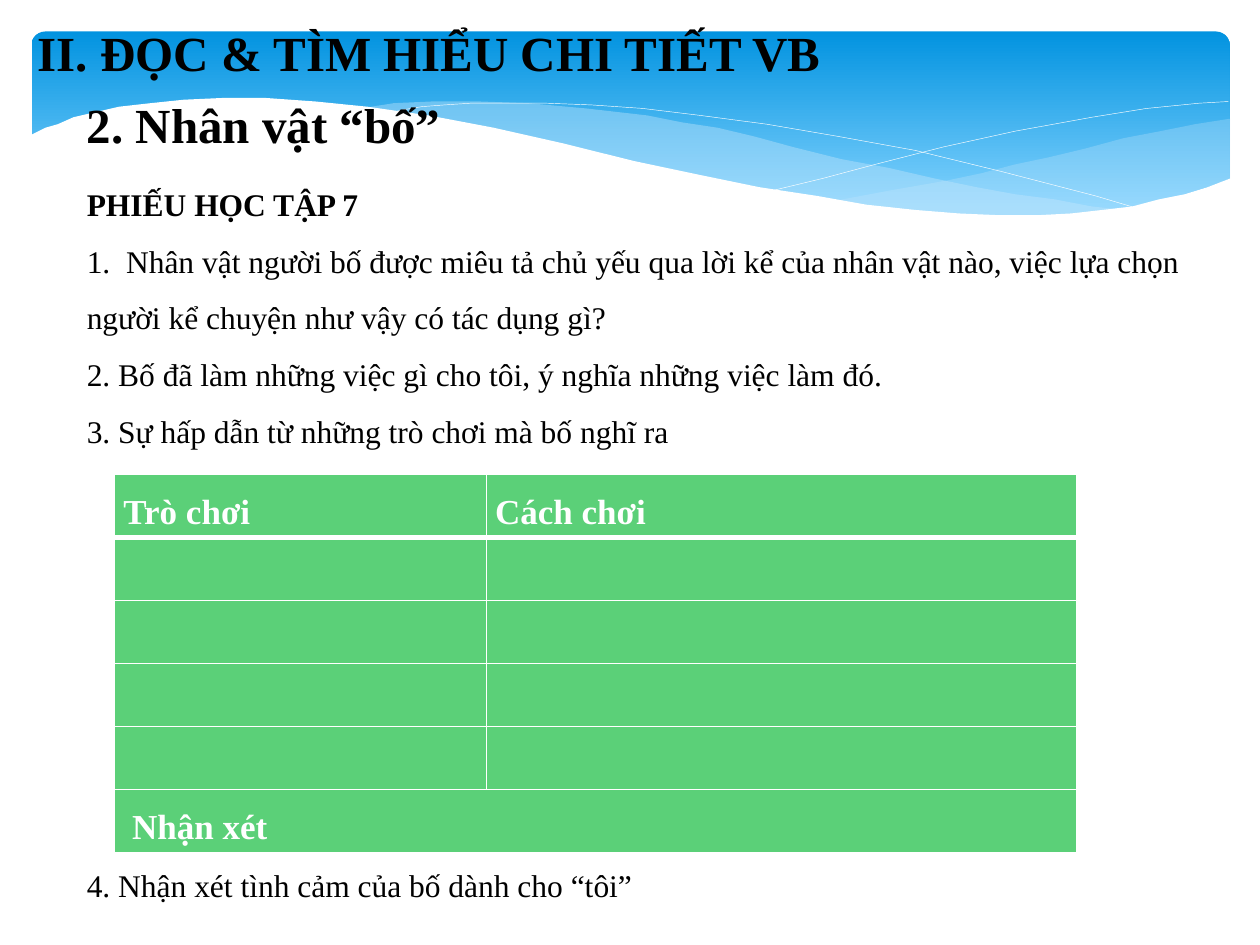
import pptx
import pptx.util
import pptx.dml.color
import pptx.enum.shapes
import pptx.enum.text
import lxml.etree

Pt = pptx.util.Pt
ALIGN = pptx.enum.text.PP_ALIGN
TOP = pptx.enum.text.MSO_ANCHOR.TOP
A = "{http://schemas.openxmlformats.org/drawingml/2006/main}"
WHITE, BLACK, GREEN, MIST = "FFFFFF", "000000", "5BD078", "C6E7FC"


def rgb(value):
    return pptx.dml.color.RGBColor.from_string(value)


def write(paragraph, text, size=18, color=BLACK, bold=False, align=ALIGN.LEFT, spacing=1.0, before=0):
    paragraph.alignment = align
    paragraph.line_spacing = spacing
    paragraph.space_before = Pt(before)
    run = paragraph.add_run()
    run.text = text
    run.font.name = "Times New Roman"
    run.font.size = Pt(size)
    run.font.bold = bold
    run.font.color.rgb = rgb(color)


deck = pptx.Presentation()
deck.slide_width, deck.slide_height = Pt(720), Pt(540)
slide = deck.slides.add_slide(deck.slide_layouts[5])
shapes = slide.shapes

banner = shapes.add_shape(pptx.enum.shapes.MSO_SHAPE.ROUNDED_RECTANGLE, Pt(18), Pt(18), Pt(684.7), Pt(112.3))
banner.adjustments[0] = 0.07
banner.shadow.inherit = False
banner.line.fill.background()
banner.fill.gradient()
banner.fill.gradient_angle = 270
for stop, position, color in zip(banner.fill.gradient_stops, (0, 0.9), ("0293E0", "83D3FE")):
    stop.position = position
    stop.color.rgb = rgb(color)

right_wave = [
    (702, 67.7), (682.6, 71.3), (663.1, 74.9), (641.5, 79.2), (619.9, 85), (599, 90), (579.6, 94.3),
    (560.9, 98.6), (542.2, 102.9), (508.3, 109.4), (475.9, 115.2), (497.5, 118.1), (517.7, 120.2),
    (536.4, 121.7), (553.7, 123.1), (570.2, 123.8), (601.2, 123.8), (614.9, 122.6), (627.8, 121.5),
    (640.1, 119.5), (651.6, 117.4), (663.1, 115.2), (683.3, 109.4), (693.4, 105.8), (702.7, 101.5),
    (702.7, 67.7),
]
middle_wave = [
    (643, 120.2), (623.5, 118.1), (602.6, 114.5), (580.3, 110.9), (558, 107.3), (533.5, 102.2),
    (508.3, 96.5), (481, 90.7), (452.9, 83.5), (430.6, 78.5), (409.7, 73.4), (389.5, 69.8),
    (370.1, 66.2), (334.8, 61.9), (302.4, 59), (273.6, 57.6), (247, 57.6), (225.4, 59),
    (205.9, 61.9), (232.6, 64.8), (260.6, 69.8), (290.9, 76.3), (323.3, 83.5), (353.5, 90.7),
    (381.6, 97.2), (407.5, 103), (432.7, 108), (456.5, 112.3), (478.8, 115.9), (500.4, 118.8),
    (519.8, 121), (538.6, 122.6), (556.6, 123.8), (573.1, 124.6), (589, 124.6), (617, 123.1),
]
falling_line = [
    (222.5, 64.8), (229, 63.4), (241.2, 61.2), (254.2, 60.2), (269.3, 59.2), (288.7, 58.8),
    (311.8, 58.7), (337.7, 59.8), (367.2, 61.9), (400.3, 65.5), (437.8, 70.6), (478.8, 77.8),
    (523.4, 86.4), (572.4, 97.9), (625.7, 111.6), (653, 119.5),
]
rising_line = [
    (441.4, 108.7), (470.2, 101.5), (500.4, 93.6), (538.6, 84.2), (580.3, 74.9), (623.5, 67),
    (655.2, 61.9), (684.7, 59), (702, 57.6),
]
page_edge = [
    (703.4, 101.5), (690.5, 106.6), (676.8, 110.9), (662.4, 114.5), (647.3, 117.8), (630, 120.2),
    (612, 122.2), (592.6, 123.1), (571, 123.2), (547.9, 122.3), (522.7, 120.2), (495.4, 116.8),
    (466.6, 112.5), (434.2, 107), (399.6, 100.1), (362.2, 92), (321.8, 82.1), (281.5, 73.4),
    (244.8, 66.2), (210.2, 61.2), (180, 58.2), (151.9, 56.4), (127.4, 56.2), (105.1, 57.1),
    (85.7, 59), (68.4, 61.3), (54.7, 64.1), (42.5, 67.2), (33.1, 70.6), (25.9, 73.4),
    (18, 76.8), (16.6, 77.3), (16.6, 161.3), (703.4, 161.3),
]
for outline, color, opacity in (
    (right_wave, MIST, 29),
    (middle_wave, MIST, 40),
    (falling_line, None, None),
    (rising_line, None, None),
    (page_edge, WHITE, 100),
):
    builder = shapes.build_freeform(*outline[0], scale=float(Pt(1)))
    builder.add_line_segments(outline[1:], close=color is not None)
    curve = builder.convert_to_shape()
    curve.shadow.inherit = False
    if color is None:
        curve.fill.background()
        curve.line.color.rgb = rgb(WHITE)
        curve.line.width = Pt(0.25)
        continue
    curve.line.fill.background()
    curve.fill.solid()
    curve.fill.fore_color.rgb = rgb(color)
    if opacity < 100:
        tint = curve.element.find(f".//{A}solidFill/{A}srgbClr")
        lxml.etree.SubElement(tint, A + "alpha", val=str(opacity * 1000))

heading = shapes.title
shapes.element.append(heading.element)
heading.left, heading.top, heading.width, heading.height = Pt(14.4), Pt(9.4), Pt(465), Pt(41)
subheading = shapes.add_textbox(Pt(42.5), Pt(50.4), Pt(436.5), Pt(41))
worksheet = shapes.add_textbox(Pt(42.5), Pt(91.4), Pt(677.5), Pt(432.7))
for box in (heading, subheading, worksheet):
    box.text_frame.word_wrap = True
    box.text_frame.vertical_anchor = TOP

write(heading.text_frame.paragraphs[0], "II. ĐỌC & TÌM HIỂU CHI TIẾT VB", size=28, bold=True)
write(subheading.text_frame.paragraphs[0], "2. Nhân vật “bố”", size=28, bold=True)
write(worksheet.text_frame.paragraphs[0], "PHIẾU HỌC TẬP 7", bold=True, spacing=1.5)
for question, before in (
    ("1.  Nhân vật người bố được miêu tả chủ yếu qua lời kể của nhân vật nào, việc lựa chọn "
     "người kể chuyện như vậy có tác dụng gì?", 0),
    ("2. Bố đã làm những việc gì cho tôi, ý nghĩa những việc làm đó.", 0),
    ("3. Sự hấp dẫn từ những trò chơi mà bố nghĩ ra", 0),
    ("4. Nhận xét tình cảm của bố dành cho “tôi”", 227),
):
    write(worksheet.text_frame.add_paragraph(), question, spacing=1.5, before=before)

games = shapes.add_table(6, 2, Pt(65.5), Pt(271), Pt(550), Pt(216)).table
games.columns[0].width, games.columns[1].width = Pt(212.4), Pt(337.6)
for row_number, row in enumerate(games.rows):
    row.height = Pt(36)
    for cell in row.cells:
        cell.margin_left = cell.margin_right = Pt(5)
        cell.margin_top = cell.margin_bottom = 0
        cell.fill.solid()
        cell.fill.fore_color.rgb = rgb(GREEN)
        properties = cell.fill._xPr
        widths = {"lnL": 1, "lnR": 1, "lnT": 3 if row_number == 1 else 1, "lnB": 3 if row_number == 0 else 1}
        for index, (side, width) in enumerate(widths.items()):
            border = lxml.etree.Element(A + side, w=str(Pt(width)))
            paint = lxml.etree.SubElement(border, A + "solidFill")
            lxml.etree.SubElement(paint, A + "srgbClr", val=WHITE)
            properties.insert(index, border)

games.cell(5, 0).merge(games.cell(5, 1))
for row_number, column, label in ((0, 0, "Trò chơi"), (0, 1, "Cách chơi"), (5, 0, " Nhận xét")):
    write(games.cell(row_number, column).text_frame.paragraphs[0], label,
          size=20, color=WHITE, bold=True, align=ALIGN.JUSTIFY, spacing=1.5)

deck.save("out.pptx")
